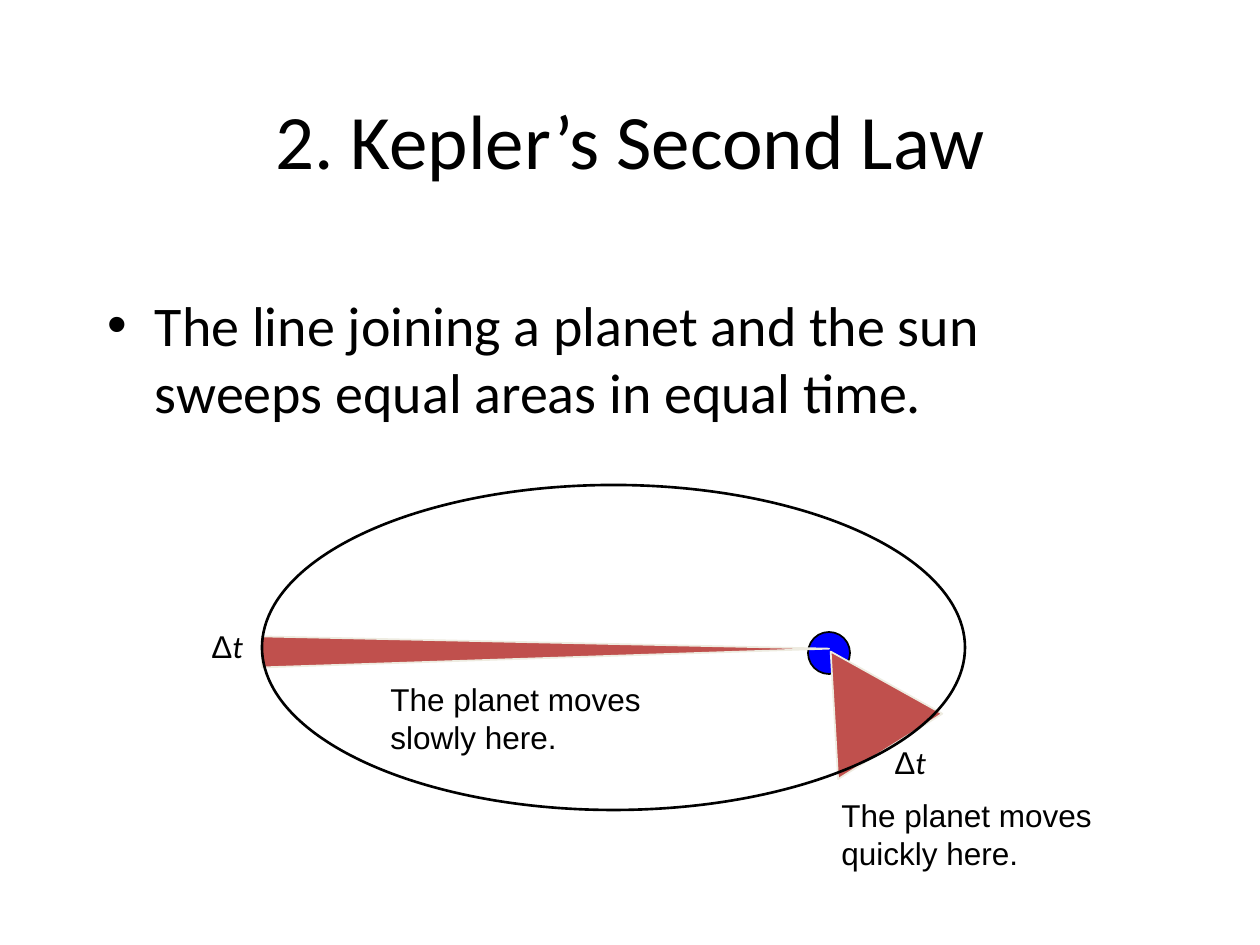
from pptx import Presentation
from pptx.dml.color import RGBColor
from pptx.enum.shapes import MSO_SHAPE
from pptx.enum.text import MSO_ANCHOR, MSO_AUTO_SIZE, PP_ALIGN
from pptx.util import Inches, Pt

PX = Inches(1) / 126

TITLE = "2. Kepler’s Second Law"
LAW = "The line joining a planet and the sun sweeps equal areas in equal time."
BLACK, SUN_BLUE, SECTOR_RED, CREAM = "000000", "0000FF", "C0504D", "EEECE1"

TITLE_BOX = (95, 60, 1071, 158)
LAW_BOX = (95, 284, 1071, 567)
SUN_BOX = (808, 632, 42, 42)
ORBIT_BOX = (262, 485, 703, 325)

# box, rotation in degrees, apex position along the base
SECTORS = [
    ((530, 364, 31, 567), 89.1, 0.68),
    ((799, 643, 123, 112), 327.9, 0.5),
]

# text, font, italic
INTERVAL = [("Δ", "Arial", False), ("t", "Calibri", True)]
SLOW = [("The planet moves slowly here.", "Arial", False)]
QUICK = [("The planet moves quickly here.", "Arial", False)]
NOTES = [
    (SLOW, (378, 674, 294, 88)),
    (QUICK, (829, 790, 286, 88)),
]
INTERVAL_LABELS = [
    (INTERVAL, (199, 621, 63, 50)),
    (INTERVAL, (882, 737, 63, 50)),
]


def emu(box):
    return [round(length * PX) for length in box]


def color(value):
    return RGBColor.from_string(value)


def add_run(paragraph, text, font, size, italic=False):
    run = paragraph.add_run()
    run.text = text
    run.font.name = font
    run.font.size = Pt(size)
    run.font.italic = italic
    run.font.color.rgb = color(BLACK)


def fill_placeholder(placeholder, box, text, size):
    placeholder.left, placeholder.top, placeholder.width, placeholder.height = emu(box)
    paragraph = placeholder.text_frame.paragraphs[0]
    add_run(paragraph, text, "Calibri", size)
    return paragraph


def add_figure(slide, kind, box, fill, line, width):
    shape = slide.shapes.add_shape(kind, *emu(box))
    shape.shadow.inherit = False
    if fill:
        shape.fill.solid()
        shape.fill.fore_color.rgb = color(fill)
    else:
        shape.fill.background()
    shape.line.color.rgb = color(line)
    shape.line.width = Pt(width)
    return shape


def add_labels(slide, labels):
    for runs, box in labels:
        frame = slide.shapes.add_textbox(*emu(box)).text_frame
        frame.word_wrap = True
        frame.auto_size = MSO_AUTO_SIZE.SHAPE_TO_FIT_TEXT
        for text, font, italic in runs:
            add_run(frame.paragraphs[0], text, font, 18, italic)


def main():
    presentation = Presentation()
    presentation.slide_width, presentation.slide_height = Inches(10), Inches(7.5)
    slide = presentation.slides.add_slide(presentation.slide_layouts[1])

    title, body = slide.placeholders
    fill_placeholder(title, TITLE_BOX, TITLE, 44).alignment = PP_ALIGN.CENTER
    title.text_frame.vertical_anchor = MSO_ANCHOR.MIDDLE
    fill_placeholder(body, LAW_BOX, LAW, 32)

    add_figure(slide, MSO_SHAPE.OVAL, SUN_BOX, SUN_BLUE, BLACK, 1)
    for box, rotation, apex in SECTORS:
        sector = add_figure(slide, MSO_SHAPE.ISOSCELES_TRIANGLE, box, SECTOR_RED, CREAM, 1)
        sector.rotation = rotation
        sector.adjustments[0] = apex
    add_labels(slide, NOTES)
    add_figure(slide, MSO_SHAPE.OVAL, ORBIT_BOX, None, BLACK, 1.5)
    add_labels(slide, INTERVAL_LABELS)

    presentation.save("out.pptx")


if __name__ == "__main__":
    main()
